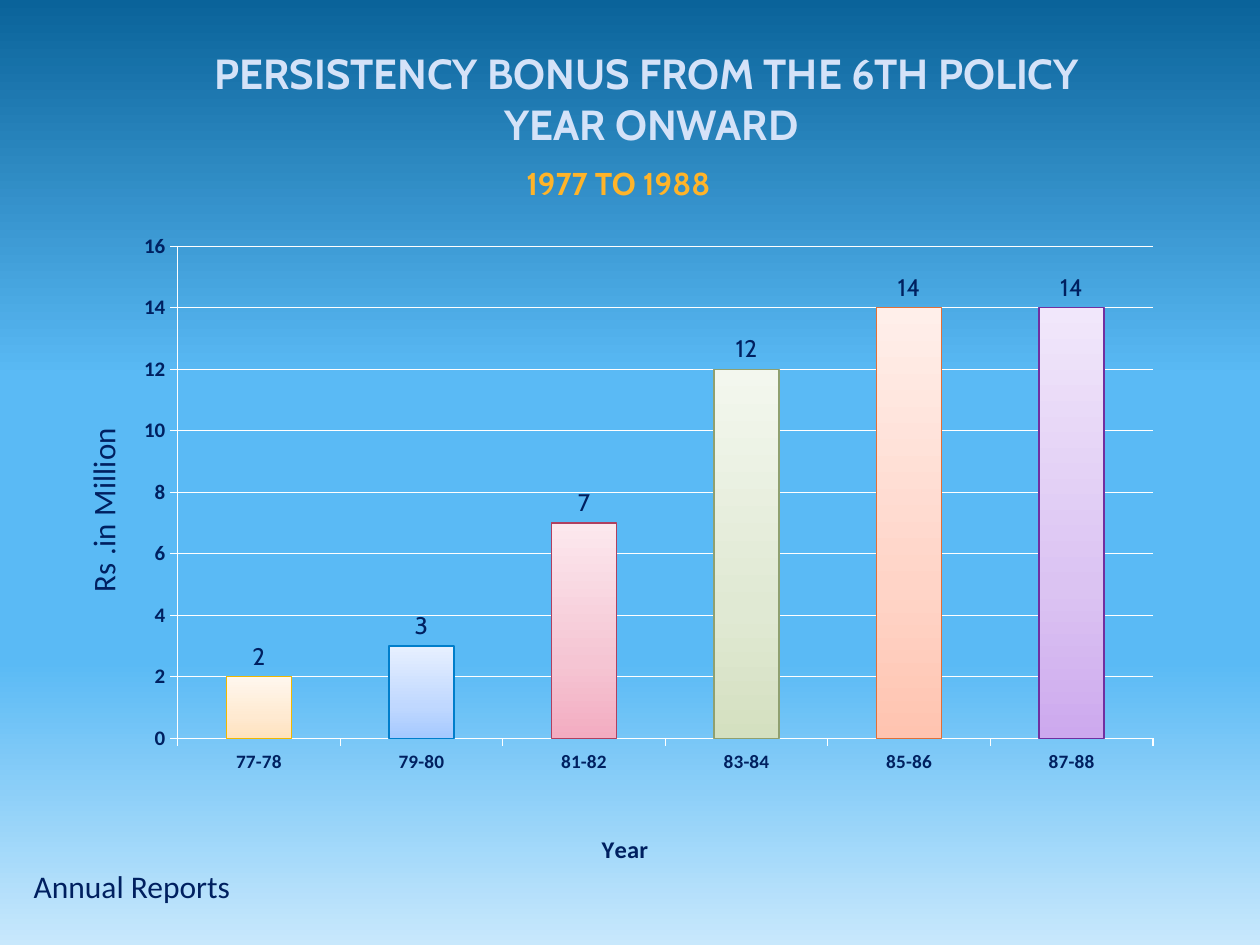
from dataclasses import dataclass

from lxml import etree
from pptx import Presentation
from pptx.chart.data import CategoryChartData
from pptx.dml.color import RGBColor
from pptx.enum import chart as ch, text
from pptx.oxml.ns import qn
from pptx.util import Cm, Pt

COLORS = {
    "navy": "002060",
    "white": "FFFFFF",
    "title": "D4E2F8",
    "period": "FFB429",
    "series": "FFC000",
}
SKY = [(0, "0A639A"), (40, "5ABAF5"), (70, "5ABAF5"), (100, "C8E8FC")]


@dataclass
class Bar:
    years: str
    bonus: int
    shades: tuple[str, str, str]
    outline: str


@dataclass
class Label:
    wording: str
    left: float
    top: float
    width: float
    height: float
    font: str
    color: str
    bold: bool = False
    wrap: bool = True


BARS = [
    Bar("77-78", 2, ("FFE2BD", "FFEAD1", "FFF7EE"), "F0B800"),
    Bar("79-80", 3, ("A5C9FF", "C0D8FF", "E7F0FF"), "007ECB"),
    Bar("81-82", 7, ("F3ACC1", "F5C5D3", "FCE8EE"), "B04060"),
    Bar("83-84", 12, ("D4E0C0", "E0E9D3", "F3F7EE"), "8FA070"),
    Bar("85-86", 14, ("FFC4B0", "FFD4C7", "FFEFEA"), "E07038"),
    Bar("87-88", 14, ("CDA9EE", "DBC3F2", "F1E7FB"), "7030A0"),
]
LABELS = [
    Label("1977 TO 1988", 10.36, 3.18, 5.05, 1.02, "Cabin", "period", True, False),
    Label("Annual Reports", 0.43, 17.35, 9.96, 1.02, "Calibri", "navy"),
]


def style_font(font, size: float, color: str, name: str, bold: bool = False) -> None:
    font.size, font.name, font.bold = Pt(size), name, bold
    font.color.rgb = RGBColor.from_string(COLORS[color])


def set_stops(gradient, stops, angle: int) -> None:
    """Replace the stops of an a:gradFill; the angle runs clockwise."""
    stop_list = gradient.find(qn("a:gsLst"))
    for stop in list(stop_list):
        stop_list.remove(stop)
    for position, color in stops:
        stop = etree.SubElement(stop_list, qn("a:gs"), pos=str(position * 1000))
        etree.SubElement(stop, qn("a:srgbClr"), val=color)
    gradient.find(qn("a:lin")).set("ang", str(angle * 60000))


def place(element, index: int, **fractions: float) -> None:
    """Give a chart part a manual layout in fractions of the chart."""
    for old in element.findall(qn("c:layout")):
        element.remove(old)
    layout = etree.Element(qn("c:layout"))
    element.insert(index, layout)
    manual = etree.SubElement(layout, qn("c:manualLayout"))
    if "w" in fractions:
        etree.SubElement(manual, qn("c:layoutTarget"), val="inner")
    for side in ("x", "y"):
        etree.SubElement(manual, qn(f"c:{side}Mode"), val="edge")
    for side, fraction in fractions.items():
        etree.SubElement(manual, qn(f"c:{side}"), val=str(fraction))


def style_axis(axis, caption: str, caption_size: int, bold: bool,
               tick_size: int, x: float, y: float) -> None:
    style_font(axis.tick_labels.font, tick_size, "navy", "Calibri", True)
    axis.major_tick_mark = ch.XL_TICK_MARK.OUTSIDE
    axis.format.line.color.rgb = RGBColor.from_string(COLORS["white"])
    frame = axis.axis_title.text_frame
    frame.text = caption
    style_font(frame.paragraphs[0].runs[0].font, caption_size, "navy", "Calibri", bold)
    place(axis.axis_title.format.element if hasattr(axis.axis_title.format, "element")
          else axis.axis_title.element, 1, x=x, y=y)


def add_bonus_chart(slide) -> None:
    data = CategoryChartData()
    data.categories = [bar.years for bar in BARS]
    data.add_series("Series 1", [bar.bonus for bar in BARS])
    chart = slide.shapes.add_chart(ch.XL_CHART_TYPE.COLUMN_CLUSTERED, Cm(0.84), Cm(4.45),
                                   Cm(22.86), Cm(13.13), data).chart
    chart.has_legend = chart.has_title = False
    style_font(chart.font, 10, "white", "Calibri")
    place(chart.element.find(".//" + qn("c:plotArea")), 0, x=0.12, y=0.04, w=0.86, h=0.77)

    style_axis(chart.category_axis, "Year", 14, True, 11, 0.49, 0.95)
    amounts = chart.value_axis
    style_axis(amounts, "Rs .in Million", 18, False, 12, 0.03, 0.32)
    amounts.minimum_scale, amounts.maximum_scale, amounts.major_unit = 0, 16, 2
    amounts.major_gridlines.format.line.color.rgb = RGBColor.from_string(COLORS["white"])

    plot = chart.plots[0]
    plot.gap_width = 150
    plot.vary_by_categories = False
    plot.has_data_labels = True
    values = plot.data_labels
    values.show_value = True
    values.position = ch.XL_LABEL_POSITION.OUTSIDE_END
    style_font(values.font, 14, "navy", "Cabin")

    series = plot.series[0]
    series.format.fill.solid()
    series.format.fill.fore_color.rgb = RGBColor.from_string(COLORS["series"])
    for index, bar in enumerate(BARS):
        column = series.points[index].format
        column.fill.gradient()
        column.line.color.rgb = RGBColor.from_string(bar.outline)
        column.line.width = Pt(0.75)
    for bar, gradient in zip(BARS, chart.element.iter(qn("a:gradFill"))):
        set_stops(gradient, zip((0, 35, 100), bar.shades), 270)


def add_title(slide) -> None:
    title = slide.shapes.title
    title.left, title.top, title.width, title.height = Cm(2.34), Cm(0.84), Cm(21.39), Cm(2.31)
    frame = title.text_frame
    frame.text = "PERSISTENCY BONUS FROM THE 6TH POLICY\v YEAR ONWARD"
    frame.vertical_anchor = text.MSO_ANCHOR.TOP
    heading = frame.paragraphs[0]
    heading.alignment = text.PP_ALIGN.CENTER
    for run in heading.runs:
        style_font(run.font, 24, "title", "Cabin", True)


def add_label(slide, label: Label) -> None:
    box = slide.shapes.add_textbox(Cm(label.left), Cm(label.top),
                                   Cm(label.width), Cm(label.height))
    frame = box.text_frame
    frame.word_wrap = label.wrap
    frame.text = label.wording
    style_font(frame.paragraphs[0].runs[0].font, 18, label.color, label.font, label.bold)


def main() -> None:
    deck = Presentation()
    deck.slide_width, deck.slide_height = Cm(25.4), Cm(19.05)
    slide = deck.slides.add_slide(deck.slide_layouts[5])
    slide.background.fill.gradient()
    set_stops(slide.element.find(".//" + qn("a:gradFill")), SKY, 90)
    add_bonus_chart(slide)
    add_title(slide)
    for label in LABELS:
        add_label(slide, label)
    deck.save("out.pptx")


if __name__ == "__main__":
    main()
